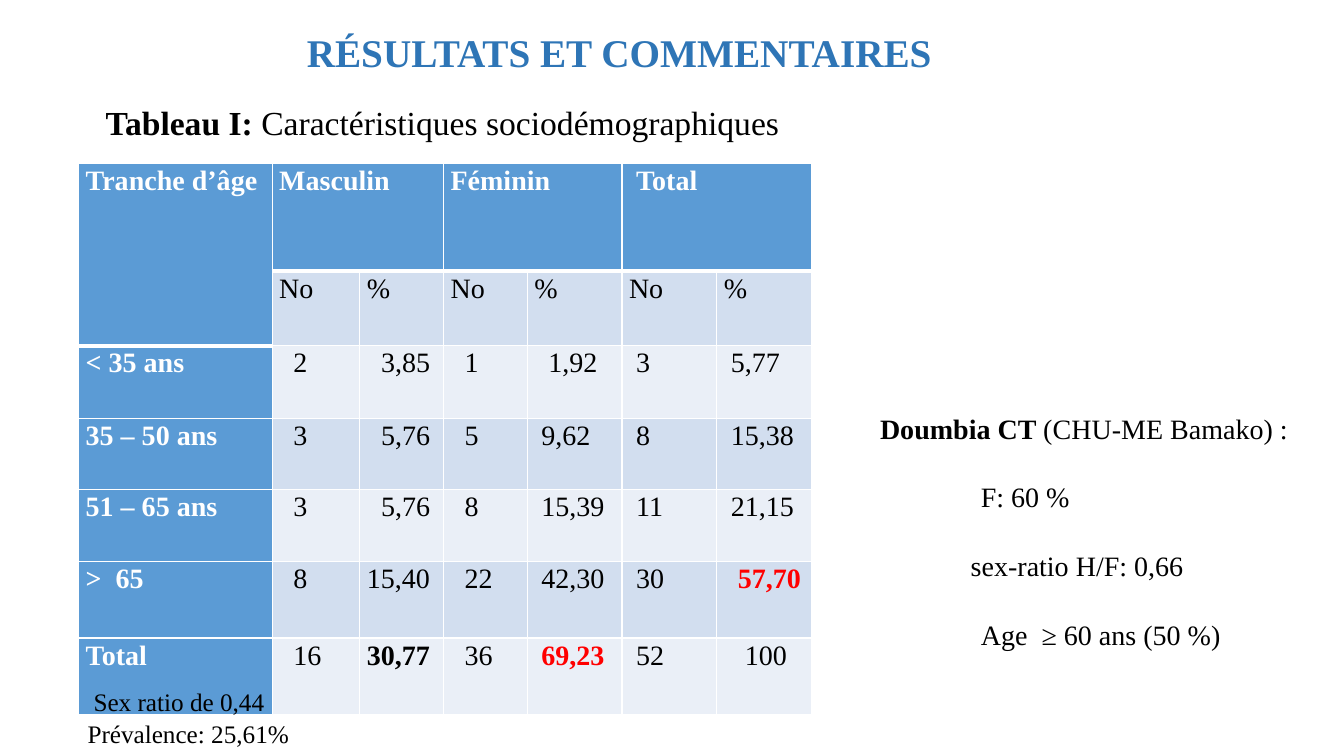
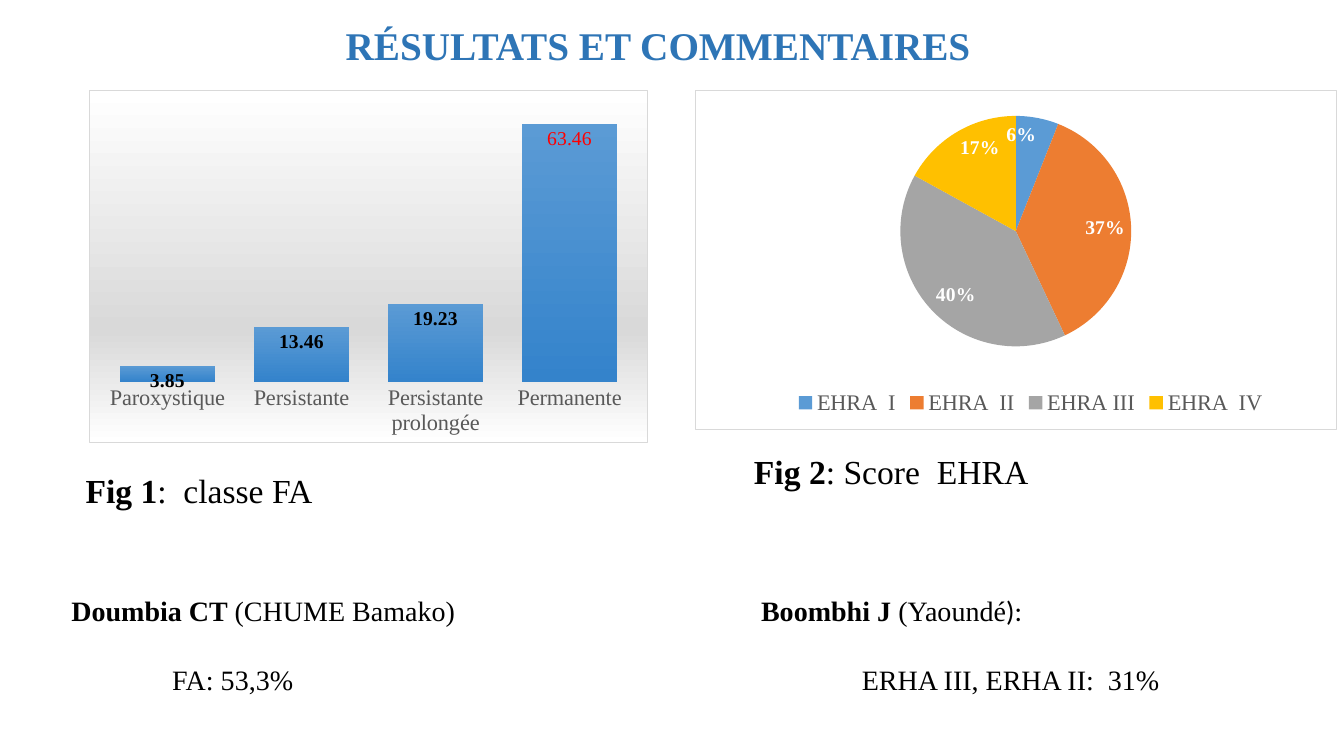
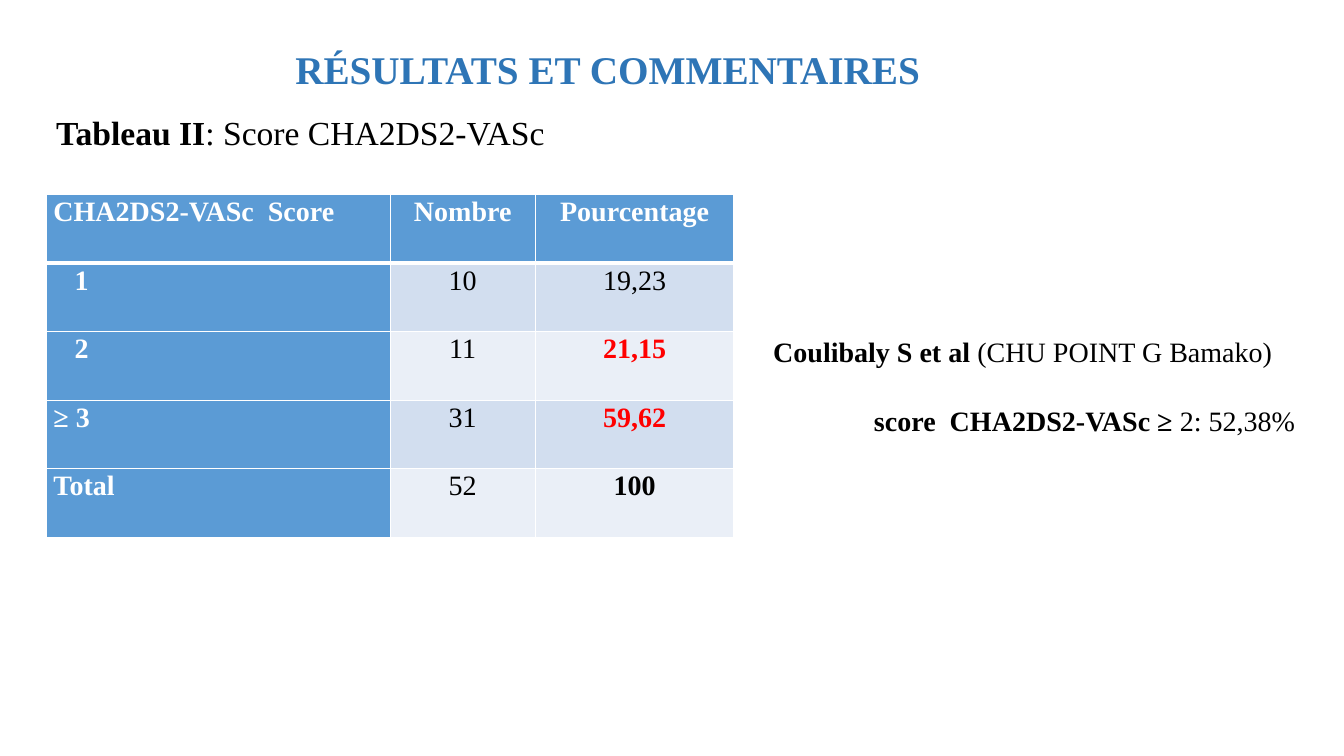
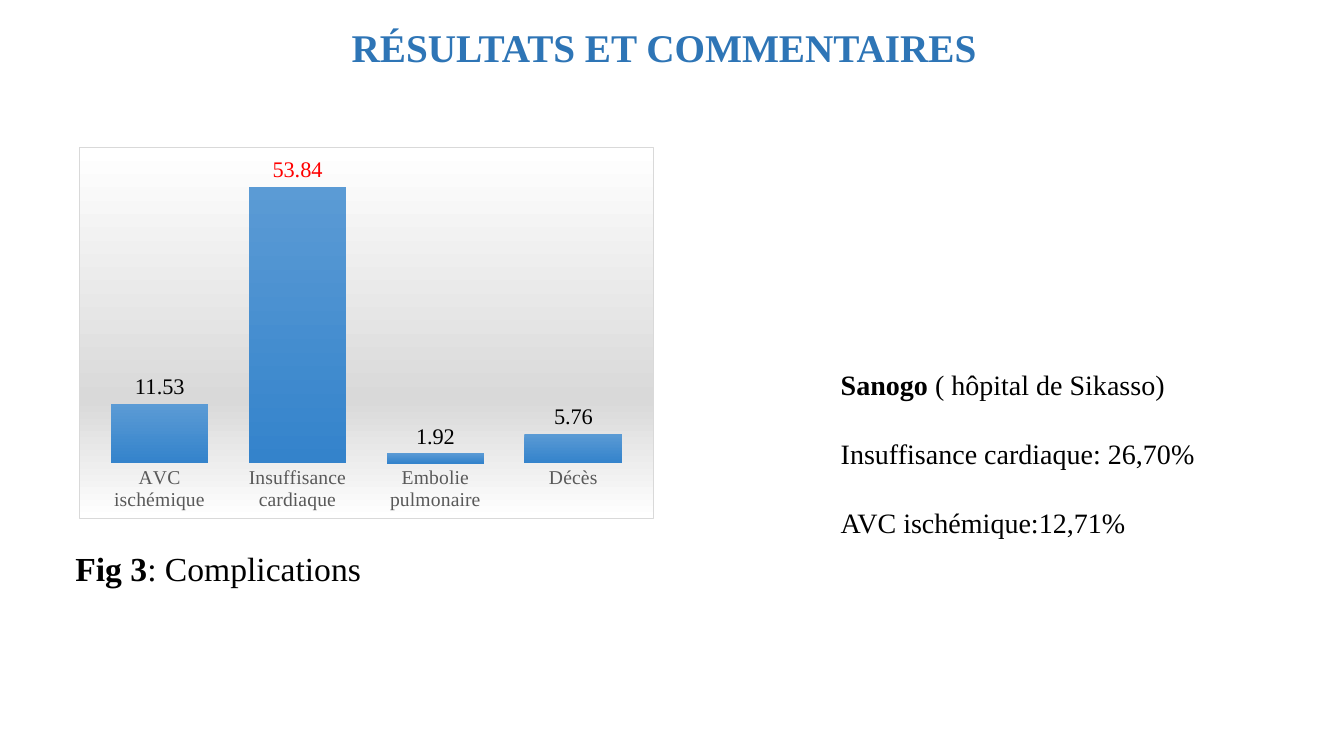
from dataclasses import dataclass, field
from typing import NamedTuple

from lxml import etree
from pptx import Presentation
from pptx import util as u
from pptx.chart import data as chart_data
from pptx.dml.color import RGBColor
from pptx.enum import chart as ch
from pptx.enum import text as tx
from pptx.oxml import parse_xml
from pptx.oxml.ns import qn

A_NS = "http://schemas.openxmlformats.org/drawingml/2006/main"
C_NS = "http://schemas.openxmlformats.org/drawingml/2006/chart"


@dataclass(frozen=True)
class Theme:
    font: str = "Times New Roman"
    alt_font: str = "Calibri"
    title: str = "2E75B6"
    ink: str = "000000"
    white: str = "FFFFFF"
    red: str = "FF0000"
    header: str = "5B9BD5"
    bands: tuple[str, str] = ("EAEFF7", "D2DEEF")
    bar: tuple[str, str] = ("5B9BD5", "3483CB")
    slices: tuple[str, ...] = ("5B9BD5", "ED7D31", "A5A5A5", "FFC000")
    grey: str = "595959"
    light_grey: str = "D9D9D9"
    title_size: float = 28
    caption_size: float = 24
    body_size: float = 20
    remark_size: float = 18
    label_size: float = 16
    small_size: float = 14


THEME = Theme()
TITLE = "RÉSULTATS ET COMMENTAIRES"
NOTE_GAP = 25
CELL_MARGIN = 0.07
INDENT_STEP = 0.07
AREA_FILL = (
    '<a:gradFill><a:gsLst>'
    + "".join(
        f'<a:gs pos="{pos}"><a:srgbClr val="{color}"/></a:gs>'
        for pos, color in (
            (0, THEME.white), (68000, THEME.light_grey), (100000, THEME.white))
    )
    + '</a:gsLst><a:lin ang="5400000" scaled="0"/></a:gradFill>'
)
WHITE_FILL = f'<a:solidFill><a:srgbClr val="{THEME.white}"/></a:solidFill>'


class Box(NamedTuple):
    left: float
    top: float
    width: float
    height: float

    def lengths(self) -> list[u.Length]:
        return [u.Inches(value) for value in self]


class Line(NamedTuple):
    """A paragraph: bold words, plain words, then a closing in the second font."""
    bold: str = ""
    plain: str = ""
    indent: float = 0
    closing: str = ""


class Row(NamedTuple):
    """Cell texts, with None inside a span, and the indent steps of each cell."""
    texts: tuple
    indents: tuple[int, ...] = ()


@dataclass(frozen=True)
class TableSpec:
    left: float
    top: float
    widths: tuple[float, ...]
    heights: tuple[float, ...]
    rows: tuple[Row, ...]
    header_depths: tuple[int, ...]
    emphasis: dict[tuple[int, int], str]
    spans: tuple[tuple[int, int, int, int], ...] = ()
    centred: bool = False


@dataclass(frozen=True)
class BarSpec:
    box: Box
    values: dict[str, float]
    highlight: str
    maximum: float
    axis_size: float
    label_size: float
    label_position: ch.XL_LABEL_POSITION
    bold_labels: bool = False
    gap: int = field(default=41)


def rgb(color: str) -> RGBColor:
    return RGBColor.from_string(color)


def set_font(font, *, size: float, color: str = THEME.ink,
             bold: bool = False, name: str = THEME.font) -> None:
    font.name = name
    font.size = u.Pt(size)
    font.bold = bold
    font.color.rgb = rgb(color)


def add_run(paragraph, text: str, **style) -> None:
    run = paragraph.add_run()
    run.text = text
    set_font(run.font, **style)


def add_lines(slide, box: Box, *lines: Line, size: float, color: str = THEME.ink,
              gap: float = 0, align=tx.PP_ALIGN.LEFT) -> None:
    frame = slide.shapes.add_textbox(*box.lengths()).text_frame
    frame.word_wrap = True
    for index, line in enumerate(lines):
        paragraph = frame.add_paragraph() if index else frame.paragraphs[0]
        paragraph.alignment = align
        if index:
            paragraph.space_before = u.Pt(gap)
        if line.indent:
            properties = paragraph._p.get_or_add_pPr()
            properties.set("marL", str(u.Inches(line.indent)))
            properties.set("indent", "0")
        for text, bold, name in (
            (line.bold, True, THEME.font),
            (line.plain, False, THEME.font),
            (line.closing, False, THEME.alt_font),
        ):
            if text:
                add_run(paragraph, text, size=size, color=color, bold=bold, name=name)


def add_title(slide, left: float, top: float, width: float) -> None:
    add_lines(slide, Box(left, top, width, 0.57), Line(TITLE), size=THEME.title_size,
              color=THEME.title, align=tx.PP_ALIGN.CENTER)


def add_caption(slide, left: float, top: float, label: str, subject: str,
                width: float = 5.2) -> None:
    add_lines(slide, Box(left, top, width, 0.5), Line(label, subject),
              size=THEME.caption_size)


def add_note(slide, box: Box, *lines: Line) -> None:
    add_lines(slide, box, *lines, size=THEME.body_size, gap=NOTE_GAP)


def set_borders(cell, top: float, bottom: float) -> None:
    properties = cell._tc.get_or_add_tcPr()
    for index, (side, points) in enumerate(
            (("L", 1), ("R", 1), ("T", top), ("B", bottom))):
        properties.insert(index, parse_xml(
            f'<a:ln{side} xmlns:a="{A_NS}" w="{u.Pt(points)}">{WHITE_FILL}</a:ln{side}>'))


def add_table(slide, spec: TableSpec) -> None:
    box = Box(spec.left, spec.top, sum(spec.widths), sum(spec.heights))
    table = slide.shapes.add_table(
        len(spec.heights), len(spec.widths), *box.lengths()).table
    for column, width in zip(table.columns, spec.widths):
        column.width = u.Inches(width)
    for row, height in zip(table.rows, spec.heights):
        row.height = u.Inches(height)
    for r, row in enumerate(spec.rows):
        indents = row.indents or (0,) * len(row.texts)
        for c, (text, indent) in enumerate(zip(row.texts, indents)):
            cell = table.cell(r, c)
            depth = spec.header_depths[c]
            is_header = r < depth or c == 0
            cell.fill.solid()
            cell.fill.fore_color.rgb = rgb(
                THEME.header if is_header else THEME.bands[r % 2])
            set_borders(cell, 3 if r == depth else 1, 3 if r < depth else 1)
            cell.margin_left = u.Inches(CELL_MARGIN + indent * INDENT_STEP)
            cell.margin_right = u.Inches(CELL_MARGIN)
            cell.margin_top = cell.margin_bottom = 0
            if text is None:
                continue
            paragraph = cell.text_frame.paragraphs[0]
            paragraph.line_spacing = 1.07
            if spec.centred and c:
                paragraph.alignment = tx.PP_ALIGN.CENTER
            color = THEME.white if is_header else spec.emphasis.get((r, c), THEME.ink)
            add_run(paragraph, text, size=THEME.body_size, color=color,
                    bold=is_header or (r, c) in spec.emphasis)
    for top, left, bottom, right in spec.spans:
        table.cell(top, left).merge(table.cell(bottom, right))


def manual_layout(inner: bool = False, **edges: float) -> etree._Element:
    target = '<c:layoutTarget val="inner"/>' if inner else ""
    values = "".join(f'<c:{key} val="{value}"/>' for key, value in edges.items())
    return parse_xml(
        f'<c:layout xmlns:c="{C_NS}"><c:manualLayout>{target}<c:xMode val="edge"/>'
        f'<c:yMode val="edge"/>{values}</c:manualLayout></c:layout>')


def add_chart(slide, kind: ch.XL_CHART_TYPE, box: Box, values: dict[str, float],
              area_fill: str):
    """Add a one-series chart with a framed background and a clear plot area."""
    content = chart_data.CategoryChartData()
    content.categories = list(values)
    content.add_series("Series 1", list(values.values()))
    chart = slide.shapes.add_chart(kind, *box.lengths(), content).chart
    chart.has_title = False
    chart.has_legend = False
    set_font(chart.font, size=10, name=THEME.alt_font)
    names = f'xmlns:c="{C_NS}" xmlns:a="{A_NS}"'
    body = chart.element.find(qn("c:chart"))
    body.addnext(parse_xml(
        f'<c:spPr {names}>{area_fill}<a:ln w="{u.Pt(0.75)}"><a:solidFill>'
        f'<a:srgbClr val="{THEME.light_grey}"/></a:solidFill></a:ln></c:spPr>'))
    body.find(qn("c:plotArea")).append(parse_xml(
        f'<c:spPr {names}><a:noFill/><a:ln><a:noFill/></a:ln></c:spPr>'))
    return chart


def add_bars(slide, spec: BarSpec) -> None:
    chart = add_chart(slide, ch.XL_CHART_TYPE.COLUMN_CLUSTERED, spec.box,
                      spec.values, AREA_FILL)
    scale = chart.value_axis
    scale.minimum_scale = 0
    scale.maximum_scale = spec.maximum
    scale.has_major_gridlines = False
    scale.visible = False
    classes = chart.category_axis
    classes.major_tick_mark = ch.XL_TICK_MARK.NONE
    classes.format.line.fill.background()
    set_font(classes.tick_labels.font, size=spec.axis_size, color=THEME.grey)

    plot = chart.plots[0]
    plot.gap_width = spec.gap
    plot.vary_by_categories = False
    series = plot.series[0]
    fill = series.format.fill
    fill.gradient()
    fill.gradient_angle = 270
    for stop, color in zip(fill.gradient_stops, THEME.bar):
        stop.color.rgb = rgb(color)
    labels = series.data_labels
    labels.show_value = True
    labels.position = spec.label_position
    set_font(labels.font, size=spec.label_size, bold=spec.bold_labels)
    highlight = series.points[list(spec.values).index(spec.highlight)].data_label
    set_font(highlight.font, size=spec.label_size, color=THEME.red)
    highlight.position = spec.label_position


def add_score_pie(slide, box: Box, values: dict[str, float]) -> None:
    chart = add_chart(slide, ch.XL_CHART_TYPE.PIE, box, values, WHITE_FILL)
    plot_area = chart.element.find(qn("c:chart")).find(qn("c:plotArea"))
    for layout in plot_area.findall(qn("c:layout")):
        plot_area.remove(layout)
    plot_area.insert(0, manual_layout(inner=True, x=0.32, y=0.075, w=0.36, h=0.68))

    chart.has_legend = True
    legend = chart.legend
    legend.position = ch.XL_LEGEND_POSITION.BOTTOM
    legend.include_in_layout = False
    set_font(legend.font, size=THEME.label_size, color=THEME.grey)
    root = chart.element.find(qn("c:chart")).find(qn("c:legend"))
    for layout in root.findall(qn("c:layout")):
        root.remove(layout)
    root.find(qn("c:legendPos")).addnext(manual_layout(x=0.15, y=0.87))

    plot = chart.plots[0]
    plot.vary_by_categories = True
    series = plot.series[0]
    for index, color in enumerate(THEME.slices):
        fill = series.points[index].format.fill
        fill.solid()
        fill.fore_color.rgb = rgb(color)
    labels = series.data_labels
    labels.show_value = False
    labels.show_percentage = True
    labels.number_format = "0%"
    labels.number_format_is_linked = False
    labels.position = ch.XL_LABEL_POSITION.INSIDE_END
    set_font(labels.font, size=THEME.small_size, color=THEME.white, bold=True)


AGE_TABLE = TableSpec(
    left=0.78, top=1.62,
    widths=(1.92, 0.87, 0.83, 0.83, 0.94, 0.94, 0.94),
    heights=(1.07, 0.74, 0.72, 0.71, 0.71, 0.76, 0.76),
    rows=(
        Row(("Tranche d’âge", "Masculin", None, "Féminin", None, "Total", None),
            (0, 0, 0, 0, 0, 1, 0)),
        Row((None, "No", "%", "No", "%", "No", "%")),
        Row(("< 35 ans", "2", "3,85", "1", "1,92", "3", "5,77"), (0, 2, 2, 2, 2, 1, 1)),
        Row(("35 – 50 ans", "3", "5,76", "5", "9,62", "8", "15,38"),
            (0, 2, 2, 2, 1, 1, 1)),
        Row(("51 – 65 ans", "3", "5,76", "8", "15,39", "11", "21,15"),
            (0, 2, 2, 2, 1, 1, 1)),
        Row((">  65", "8", "15,40", "22", "42,30", "30", "57,70"),
            (0, 2, 0, 2, 1, 1, 2)),
        Row(("Total", "16", "30,77", "36", "69,23", "52", "100"),
            (0, 2, 0, 2, 1, 1, 3)),
    ),
    header_depths=(2, 1, 1, 1, 1, 1, 1),
    emphasis={(5, 6): THEME.red, (6, 2): THEME.ink, (6, 4): THEME.red},
    spans=((0, 0, 1, 0), *((0, c, 0, c + 1) for c in (1, 3, 5))),
)

SCORE_TABLE = TableSpec(
    left=0.46, top=1.93,
    widths=(3.41, 1.44, 1.97),
    heights=(0.68,) * 5,
    rows=(
        Row(("CHA2DS2-VASc  Score", "Nombre", "Pourcentage")),
        Row(("1", "10", "19,23"), (3, 0, 0)),
        Row(("2", "11", "21,15"), (3, 0, 0)),
        Row(("≥ 3", "31", "59,62")),
        Row(("Total", "52", "100")),
    ),
    header_depths=(1, 1, 1),
    emphasis={(2, 2): THEME.red, (3, 2): THEME.red, (4, 2): THEME.ink},
    centred=True,
)

CLASS_BARS = BarSpec(
    box=Box(0.88, 0.89, 5.55, 3.51),
    values={"Paroxystique": 3.85, "Persistante": 13.46,
            "Persistante prolongée": 19.23, "Permanente": 63.46},
    highlight="Permanente", maximum=70,
    axis_size=THEME.label_size, label_size=THEME.small_size,
    label_position=ch.XL_LABEL_POSITION.INSIDE_END, bold_labels=True,
)

COMPLICATION_BARS = BarSpec(
    box=Box(0.78, 1.46, 5.71, 3.69),
    values={"AVC ischémique": 11.53, "Insuffisance cardiaque": 53.84,
            "Embolie pulmonaire": 1.92, "Décès": 5.76},
    highlight="Insuffisance cardiaque", maximum=60,
    axis_size=THEME.small_size, label_size=THEME.label_size,
    label_position=ch.XL_LABEL_POSITION.OUTSIDE_END,
)


def build_demographics(slide) -> None:
    add_title(slide, 0.77, 0.23, 10.74)
    add_caption(slide, 0.95, 0.96, "Tableau I: ",
                "Caractéristiques sociodémographiques", width=8.92)
    add_table(slide, AGE_TABLE)
    add_note(slide, Box(8.63, 4.03, 4.6, 2.46),
             Line("Doumbia CT ", "(CHU-ME Bamako) :"),
             Line(plain="F: 60 %", indent=1),
             Line(plain="sex-ratio H/F: 0,66", indent=0.9),
             Line(plain="Age  ≥ 60 ans (50 %)", indent=1))
    add_lines(slide, Box(0.77, 6.76, 2.5, 0.71),
              Line(plain="Sex ratio de 0,44", indent=0.06),
              Line(plain="Prévalence: 25,61%"),
              size=THEME.remark_size, gap=1)


def build_classes(slide) -> None:
    add_bars(slide, CLASS_BARS)
    add_caption(slide, 0.75, 4.61, "Fig 1", ":  classe FA")
    add_note(slide, Box(0.61, 5.84, 4.3, 1.11),
             Line("Doumbia CT ", "(CHUME Bamako)"),
             Line(plain="FA: 53,3%", indent=1))
    add_score_pie(slide, Box(6.89, 0.89, 6.37, 3.38),
                  {"EHRA  I": 6, "EHRA  II": 37, "EHRA III": 40, "EHRA  IV": 17})
    add_caption(slide, 7.38, 4.42, "Fig 2", ": Score  EHRA")
    add_note(slide, Box(7.45, 5.84, 4.5, 1.11),
             Line("Boombhi J ", "(Yaoundé", closing="):"),
             Line(plain="ERHA III, ERHA II:  31%", indent=1))
    add_title(slide, 0.88, 0.16, 11.29)


def build_scores(slide) -> None:
    add_title(slide, 1.82, 0.4, 8.41)
    add_caption(slide, 0.46, 1.06, "Tableau II", ": Score CHA2DS2-VASc")
    add_note(slide, Box(7.57, 3.27, 5.6, 1.11),
             Line("Coulibaly S et al ", "(CHU POINT G Bamako)"),
             Line("score  CHA2DS2-VASc ≥", " 2: 52,38%", indent=1))
    add_table(slide, SCORE_TABLE)


def build_complications(slide) -> None:
    add_bars(slide, COMPLICATION_BARS)
    add_title(slide, 2.01, 0.18, 9.15)
    add_caption(slide, 0.65, 5.39, "Fig 3", ": Complications")
    add_note(slide, Box(8.24, 3.6, 4, 1.78),
             Line("Sanogo", " ( hôpital de Sikasso)"),
             Line(plain="Insuffisance cardiaque: 26,70%"),
             Line(plain="AVC ischémique:12,71%"))


def main() -> None:
    deck = Presentation()
    deck.slide_width, deck.slide_height = u.Inches(13.33), u.Inches(7.5)
    blank = deck.slide_layouts[6]
    for build in (build_demographics, build_classes, build_scores, build_complications):
        build(deck.slides.add_slide(blank))
    deck.save("out.pptx")


if __name__ == "__main__":
    main()
